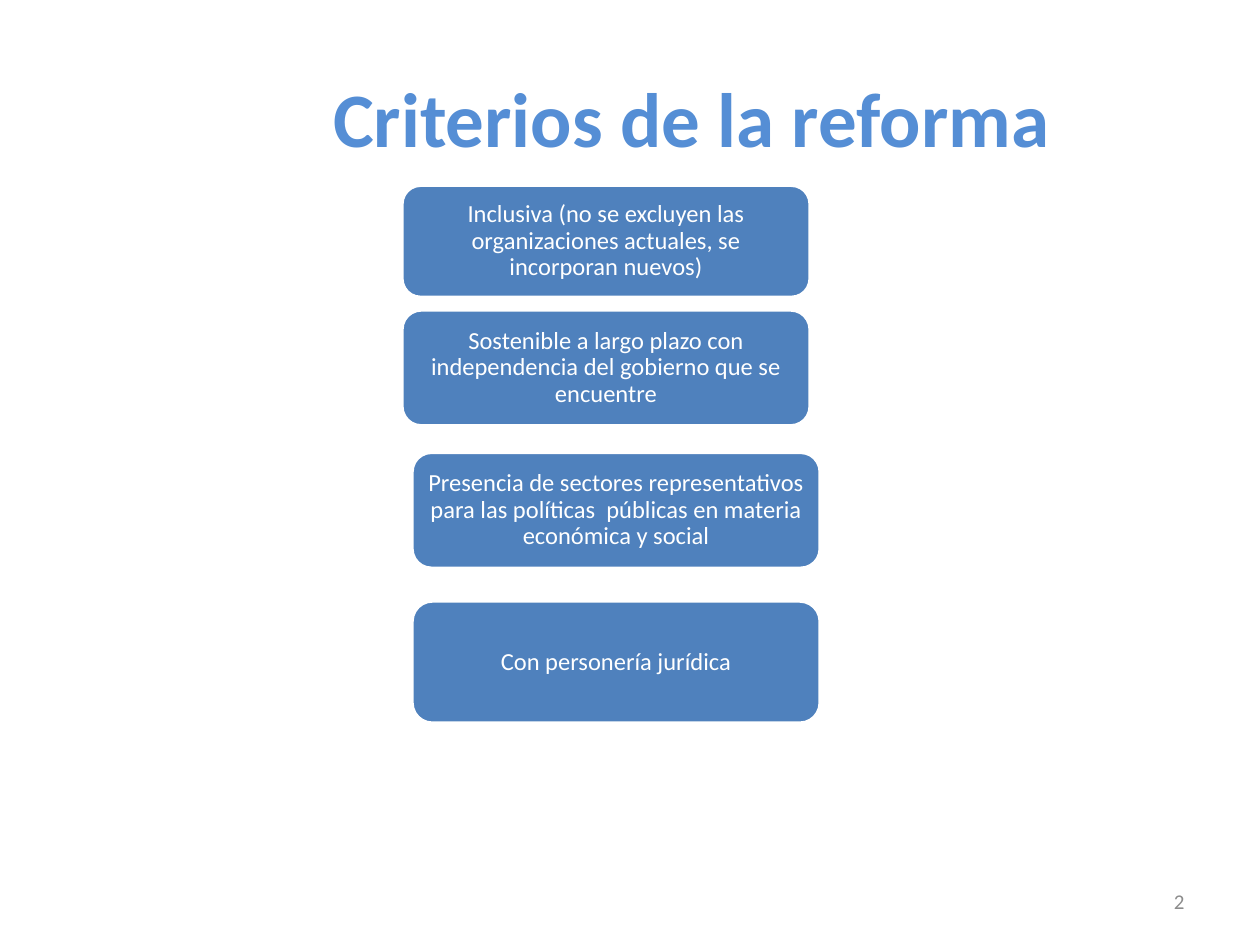
from dataclasses import dataclass

from pptx import Presentation
from pptx.dml.color import RGBColor as RGB
from pptx.enum.shapes import MSO_SHAPE as Shape
from pptx.enum.text import MSO_ANCHOR as Anchor, PP_ALIGN as Align
from pptx.util import Inches, Pt


@dataclass(frozen=True)
class Theme:
    font: str = "Calibri"
    heading: RGB = RGB(0x55, 0x8E, 0xD5)
    card: RGB = RGB(0x4F, 0x81, 0xBD)
    white: RGB = RGB(0xFF, 0xFF, 0xFF)
    muted: RGB = RGB(0x8C, 0x8C, 0x8C)
    heading_size: int = 44
    card_size: int = 14
    number_size: int = 12


def write(frame, text, *, font, size, color, bold=False, align=Align.CENTER,
          spacing=None, insets=(0.1, 0.05), indent=0):
    frame.word_wrap = True
    frame.vertical_anchor = Anchor.MIDDLE
    frame.margin_left = Inches(insets[0] + indent)
    frame.margin_right = Inches(insets[0])
    frame.margin_top = frame.margin_bottom = Inches(insets[1])
    paragraph = frame.paragraphs[0]
    paragraph.alignment = align
    if spacing:
        paragraph.line_spacing = spacing
    run = paragraph.add_run()
    run.text = text
    run.font.name = font
    run.font.size = Pt(size)
    run.font.bold = bold
    run.font.color.rgb = color


class SlideBuilder:
    def __init__(self, slide, theme):
        self.slide = slide
        self.theme = theme

    def title(self, text, left, top, width, height, indent):
        heading = self.slide.shapes.title
        heading.left, heading.top = Inches(left), Inches(top)
        heading.width, heading.height = Inches(width), Inches(height)
        write(heading.text_frame, text, font=self.theme.font,
              size=self.theme.heading_size, color=self.theme.heading,
              bold=True, indent=indent)

    def card(self, text, left, top, width, height):
        card = self.slide.shapes.add_shape(
            Shape.ROUNDED_RECTANGLE, Inches(left), Inches(top),
            Inches(width), Inches(height))
        card.shadow.inherit = False
        card.fill.solid()
        card.fill.fore_color.rgb = self.theme.card
        card.line.color.rgb = self.theme.white
        card.line.width = Pt(2)
        write(card.text_frame, text, font=self.theme.font,
              size=self.theme.card_size, color=self.theme.white,
              spacing=0.9, insets=(0.06, 0.03))

    def page_number(self, text, left, top, width, height):
        number = self.slide.shapes.add_textbox(
            Inches(left), Inches(top), Inches(width), Inches(height))
        write(number.text_frame, text, font=self.theme.font,
              size=self.theme.number_size, color=self.theme.muted,
              align=Align.RIGHT)


CARD_WIDTH = 3.24
CRITERIA = [
    ("Inclusiva (no se excluyen las organizaciones actuales, se incorporan nuevos)",
     3.19, 1.47, 0.89),
    ("Sostenible a largo plazo con independencia del gobierno que se encuentre",
     3.19, 2.46, 0.92),
    ("Presencia de sectores representativos para las políticas  públicas "
     "en materia económica y social", 3.27, 3.59, 0.92),
    ("Con personería jurídica", 3.27, 4.77, 0.97),
]


def main():
    deck = Presentation()
    deck.slide_width, deck.slide_height = Inches(10), Inches(7.5)
    slide = deck.slides.add_slide(deck.slide_layouts[5])
    builder = SlideBuilder(slide, Theme())
    builder.title("Criterios de la reforma", 0.5, 0.3, 9, 1.25, indent=0.98)
    for criterion, left, top, height in CRITERIA:
        builder.card(criterion, left, top, CARD_WIDTH, height)
    builder.page_number("2", 7.17, 6.95, 2.33, 0.4)
    deck.save("out.pptx")


if __name__ == "__main__":
    main()
